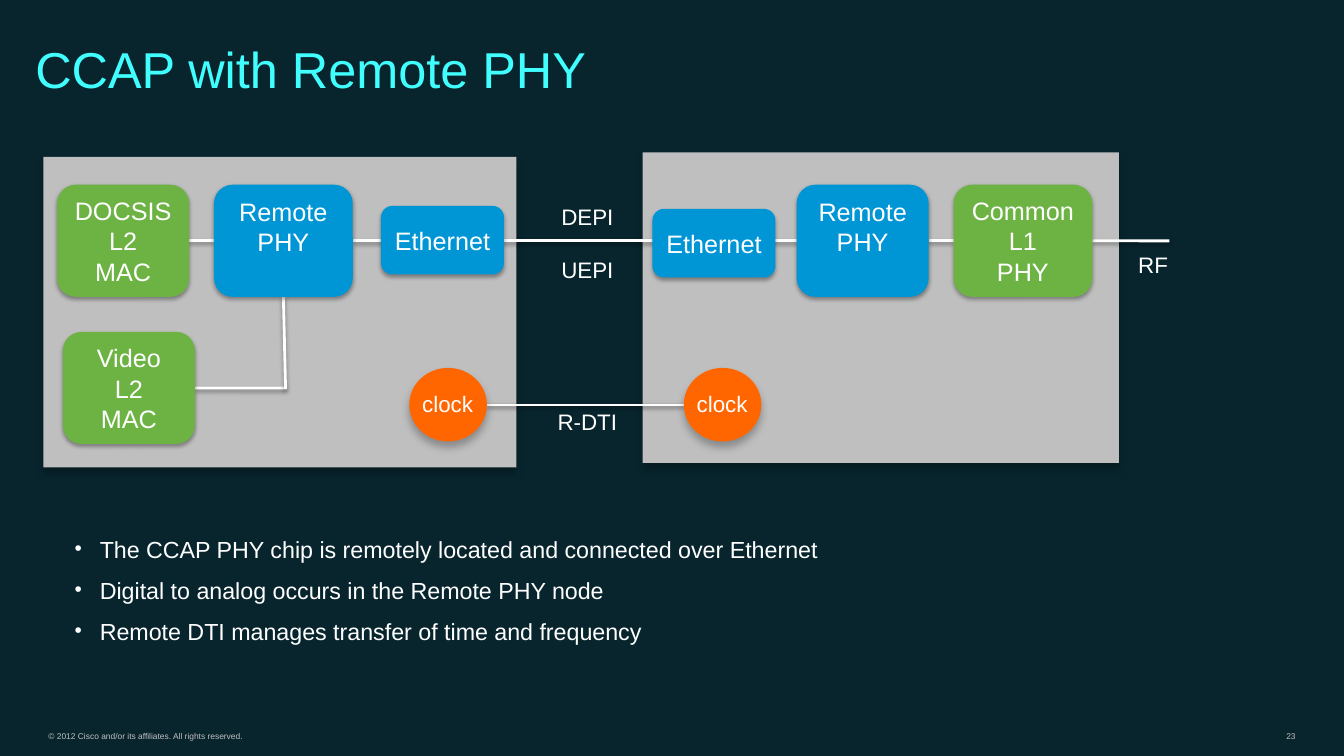
"""Build the slide showing a CCAP split from its Remote PHY node."""
from lxml.etree import SubElement
from pptx import Presentation
from pptx.dml.color import RGBColor
from pptx.enum.shapes import MSO_CONNECTOR, MSO_SHAPE
from pptx.enum.text import MSO_ANCHOR, MSO_AUTO_SIZE, PP_ALIGN
from pptx.oxml.ns import qn
from pptx.util import Emu, Inches, Pt

NAVY = RGBColor(0x08, 0x25, 0x2E)
CYAN = RGBColor(0x40, 0xFF, 0xFE)
WHITE = RGBColor(0xFF, 0xFF, 0xFF)
PANEL_GRAY = RGBColor(0xBF, 0xBF, 0xBF)
FOOTER_GRAY = RGBColor(0xC0, 0xC0, 0xC0)
GREEN = RGBColor(0x6D, 0xB3, 0x44)
BLUE = RGBColor(0x00, 0x96, 0xD6)
ORANGE = RGBColor(0xFF, 0x66, 0x00)

presentation = Presentation()
presentation.slide_width = Inches(13.33)
presentation.slide_height = Inches(7.5)
COLUMN = presentation.slide_width / 40
ROW = presentation.slide_height / 30


def place(column, row, columns, rows):
    """Turn a grid position and size into slide lengths."""
    return (Emu(round(column * COLUMN)), Emu(round(row * ROW)),
            Emu(round(columns * COLUMN)), Emu(round(rows * ROW)))


def write(text_frame, lines, size, color, alignment=PP_ALIGN.LEFT):
    """Write one paragraph per line and return the paragraphs."""
    for index, line in enumerate(lines):
        paragraph = text_frame.add_paragraph() if index else text_frame.paragraphs[0]
        paragraph.alignment = alignment
        run = paragraph.add_run()
        run.text = line
        run.font.name = "Arial"
        run.font.size = Pt(size)
        run.font.color.rgb = color
    return text_frame.paragraphs


slide = presentation.slides.add_slide(presentation.slide_layouts[1])
slide.background.fill.solid()
slide.background.fill.fore_color.rgb = NAVY
title, body = slide.placeholders

title.left, title.top, title.width, title.height = place(0.75, 0.4, 37.53, 3.68)
title.text_frame.vertical_anchor = MSO_ANCHOR.BOTTOM
title.text_frame.auto_size = MSO_AUTO_SIZE.NONE
write(title.text_frame, ["CCAP with Remote PHY"], 36, CYAN)[0].line_spacing = 0.8

body.left, body.top, body.width, body.height = place(1.92, 21.28, 36, 4.72)
body.text_frame.auto_size = MSO_AUTO_SIZE.NONE
bullets = write(body.text_frame, [
    "The CCAP PHY chip is remotely located and connected over Ethernet",
    "Digital to analog occurs in the Remote PHY node",
    "Remote DTI manages transfer of time and frequency",
], 16.6, WHITE)
for index, paragraph in enumerate(bullets):
    paragraph.line_spacing = 0.75
    paragraph.space_before = Pt(14.4 if index else 0)
    properties = paragraph._p.get_or_add_pPr()
    properties.set("marL", str(Inches(0.25)))
    properties.set("indent", str(-Inches(0.25)))
    SubElement(properties, qn("a:buSzPct")).set("val", "90000")
    SubElement(properties, qn("a:buFont")).set("typeface", "Arial")
    SubElement(properties, qn("a:buChar")).set("char", "•")

DEEP_SHADOW = (6, 4, 27)
BLOCK_SHADOW = (3.1, 1.8, 35)
LINE_SHADOW = (3.1, 1.6, 38)
shadowed = []
blocks = {}
for name, preset, box, color, lines, shadow in [
    ("node panel", MSO_SHAPE.RECTANGLE, (19.13, 6.05, 14.17, 12.32), PANEL_GRAY, [], DEEP_SHADOW),
    ("core panel", MSO_SHAPE.RECTANGLE, (1.29, 6.23, 14.08, 12.32), PANEL_GRAY, [], DEEP_SHADOW),
    ("docsis", MSO_SHAPE.ROUNDED_RECTANGLE, (1.7, 7.33, 3.93, 4.45), GREEN, ["DOCSIS", "L2", "MAC"], BLOCK_SHADOW),
    ("core phy", MSO_SHAPE.ROUNDED_RECTANGLE, (6.37, 7.33, 4.13, 4.45), BLUE, ["Remote", "PHY"], BLOCK_SHADOW),
    ("video", MSO_SHAPE.ROUNDED_RECTANGLE, (1.87, 13.17, 3.93, 4.45), GREEN, ["Video", "L2", "MAC"], BLOCK_SHADOW),
    ("node phy", MSO_SHAPE.ROUNDED_RECTANGLE, (23.71, 7.33, 3.93, 4.45), BLUE, ["Remote PHY"], BLOCK_SHADOW),
    ("common", MSO_SHAPE.ROUNDED_RECTANGLE, (28.38, 7.33, 4.13, 4.45), GREEN, ["Common", "L1", "PHY"], BLOCK_SHADOW),
    ("core ethernet", MSO_SHAPE.ROUNDED_RECTANGLE, (11.34, 8.17, 3.66, 2.72), BLUE, ["Ethernet"], BLOCK_SHADOW),
    ("node ethernet", MSO_SHAPE.ROUNDED_RECTANGLE, (19.42, 8.29, 3.66, 2.72), BLUE, ["Ethernet"], BLOCK_SHADOW),
    ("core clock", MSO_SHAPE.OVAL, (12.18, 14.6, 2.31, 2.92), ORANGE, [], DEEP_SHADOW),
    ("node clock", MSO_SHAPE.OVAL, (20.35, 14.6, 2.31, 2.92), ORANGE, [], DEEP_SHADOW),
]:
    shape = slide.shapes.add_shape(preset, *place(*box))
    shape.fill.solid()
    shape.fill.fore_color.rgb = color
    shape.line.fill.background()
    shape.text_frame.vertical_anchor = MSO_ANCHOR.MIDDLE
    shape.text_frame.word_wrap = True
    write(shape.text_frame, lines, 18, WHITE, PP_ALIGN.CENTER)
    blocks[name] = shape
    shadowed.append((shape, shadow))
for name in ("core phy", "node phy"):
    blocks[name].text_frame.margin_bottom = Inches(0.34)

for start, end, begin_joint, end_joint in [
    ((5.63, 9.56), (6.37, 9.56), ("docsis", 3), ("core phy", 1)),
    ((5.8, 15.4), (8.5, 15.4), ("video", 3), None),
    ((8.5, 15.44), (8.43, 11.78), None, ("core phy", 2)),
    ((10.5, 9.56), (23.71, 9.56), ("core phy", 3), ("node phy", 1)),
    ((27.64, 9.56), (28.38, 9.56), ("node phy", 3), ("common", 1)),
    ((32.51, 9.56), (34.8, 9.56), ("common", 3), None),
    ((14.49, 16.07), (20.35, 16.07), None, None),
]:
    connector = slide.shapes.add_connector(MSO_CONNECTOR.STRAIGHT, *place(*start, *end))
    if begin_joint:
        connector.begin_connect(blocks[begin_joint[0]], begin_joint[1])
    if end_joint:
        connector.end_connect(blocks[end_joint[0]], end_joint[1])
    connector.line.color.rgb = WHITE
    connector.line.width = Pt(2)
    blocks["docsis"]._element.addprevious(connector._element)
    shadowed.append((connector, LINE_SHADOW))

for shape, (blur, distance, opacity) in shadowed:
    effects = SubElement(shape._element.spPr, qn("a:effectLst"))
    shadow = SubElement(effects, qn("a:outerShdw"), blurRad=str(Pt(blur)),
                        dist=str(Pt(distance)), dir="5400000", rotWithShape="0")
    shadow_color = SubElement(shadow, qn("a:srgbClr"), val="000000")
    SubElement(shadow_color, qn("a:alpha"), val=str(opacity * 1000))

for lines, box in [
    (["clock"], (12.27, 15.28, 2.16, 1.48)),
    (["clock"], (20.44, 15.28, 2.16, 1.48)),
    (["DEPI", "UEPI"], (16.41, 7.88, 2.19, 3.64)),
    (["RF"], (33.58, 9.76, 1.5, 1.48)),
    (["R-DTI"], (16.3, 16, 2.4, 1.48)),
]:
    label = slide.shapes.add_textbox(*place(*box))
    label.text_frame.word_wrap = False
    for paragraph in write(label.text_frame, lines, 16, WHITE)[1:]:
        paragraph.space_before = Pt(18.4)

for text, box, alignment, wraps in [
    ("© 2012 Cisco and/or its affiliates. All rights reserved.", (1.17, 28.8, 14.97, 0.76), PP_ALIGN.LEFT, True),
    ("23", (37.99, 28.8, 0.84, 0.76), PP_ALIGN.RIGHT, False),
]:
    footer = slide.shapes.add_textbox(*place(*box))
    frame = footer.text_frame
    frame.word_wrap = wraps
    frame.vertical_anchor = MSO_ANCHOR.BOTTOM
    frame.margin_left = frame.margin_right = Inches(0.09)
    frame.margin_top = frame.margin_bottom = Inches(0.04)
    write(frame, [text], 6, FOOTER_GRAY, alignment)

presentation.save("out.pptx")
